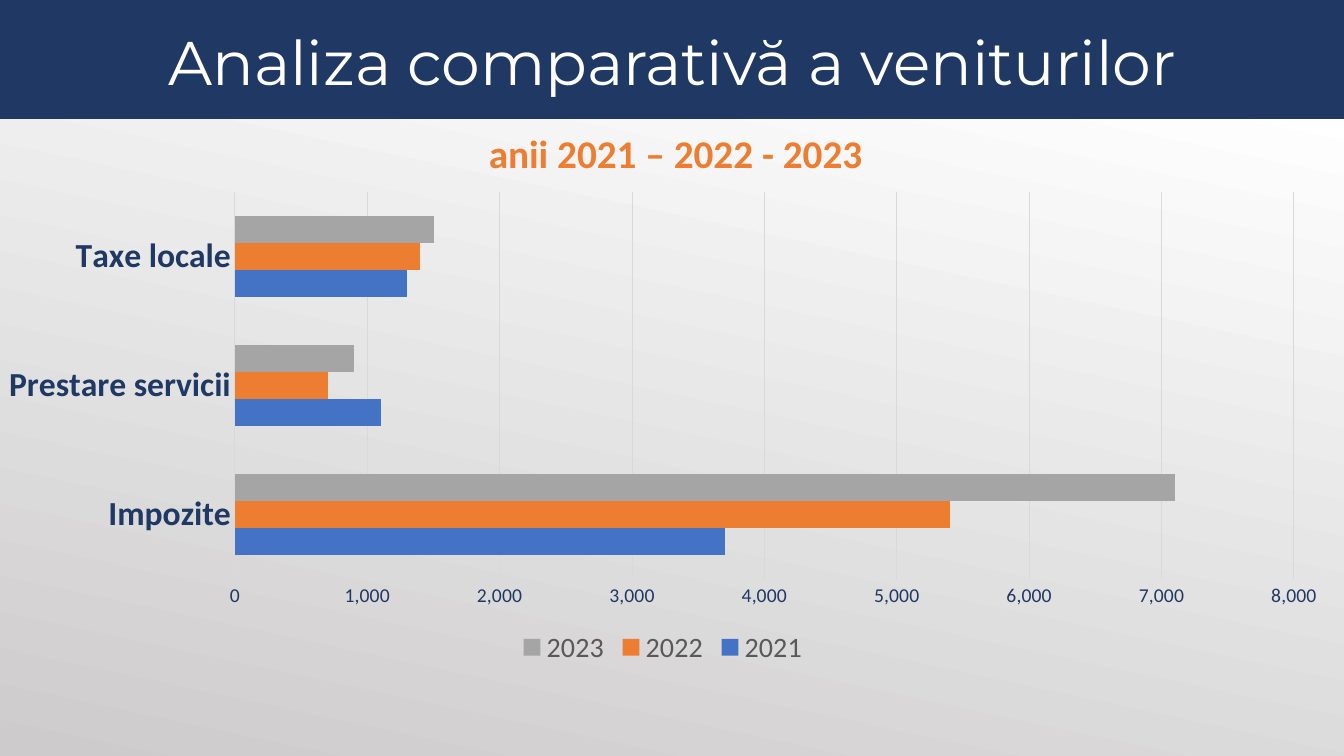
"""Builds the slide comparing revenues for 2021, 2022 and 2023."""
from pptx import Presentation
from pptx.chart.data import CategoryChartData
from pptx.dml.color import RGBColor
from pptx.enum.chart import XL_CHART_TYPE as ChartType, XL_LEGEND_POSITION as LegendPosition
from pptx.enum.chart import XL_TICK_MARK as TickMark
from pptx.enum.shapes import MSO_SHAPE as Shape
from pptx.enum.text import MSO_ANCHOR as Anchor, PP_ALIGN as Align
from pptx.util import Inches, Pt

TITLE = "Analiza comparativă a veniturilor"
SUBTITLE = "anii 2021 – 2022 - 2023"
CATEGORIES = ["Impozite", "Prestare servicii", "Taxe locale"]
REVENUES = {
    "2021": ([3700, 1100, 1300], "blue"),
    "2022": ([5400, 700, 1400], "orange"),
    "2023": ([7100, 900, 1500], "gray"),
}
COLORS = {
    "navy": "203864", "white": "FFFFFF", "shade": "CDCBCB", "blue": "4472C4",
    "orange": "ED7D31", "gray": "A5A5A5", "grid": "D9D9D9", "legend": "595959",
    "black": "000000",
}
WIDTH, HEIGHT = 13.33, 7.5
BACKDROP_STOPS = [(0.1, "white"), (1, "shade")]


def color(name):
    return RGBColor.from_string(COLORS[name])


def box(*lengths):
    return [Inches(length) for length in lengths]


def style_font(font, size, color_name, bold=False, face="Calibri"):
    font.name, font.size, font.bold = face, Pt(size), bold
    font.color.rgb = color(color_name)


def style_line(line, color_name):
    line.color.rgb = color(color_name)
    line.width = Pt(0.75)


def add_backdrop(slide):
    fill = slide.background.fill
    fill.gradient()
    fill.gradient_angle = 360 - 102
    for stop, (position, color_name) in zip(fill.gradient_stops, BACKDROP_STOPS):
        stop.position = position
        stop.color.rgb = color(color_name)


def add_headings(slide):
    banner = slide.shapes.add_shape(Shape.RECTANGLE, *box(0, 0, WIDTH, 1.18))
    banner.shadow.inherit = False
    banner.fill.solid()
    banner.fill.fore_color.rgb = color("navy")
    banner.line.fill.background()

    title = slide.shapes.title
    title.element.addprevious(banner.element)
    title.left, title.top, title.width, title.height = box(0.17, 0.25, 13, 0.81)
    title.text_frame.vertical_anchor = Anchor.MIDDLE
    subtitle = slide.shapes.add_textbox(*box(0.23, 1.23, 12.94, 0.57))
    subtitle.text_frame.word_wrap = True
    for heading, text in ((title, TITLE), (subtitle, SUBTITLE)):
        heading.text_frame.text = text
        heading.text_frame.paragraphs[0].alignment = Align.CENTER
    title_line = title.text_frame.paragraphs[0]
    title_line.line_spacing = 0.9
    style_font(title_line.font, 44, "white", face="Montserrat")
    style_font(subtitle.text_frame.paragraphs[0].font, 28, "orange", bold=True)


def add_revenue_chart(slide):
    data = CategoryChartData(number_format="#,##0")
    data.categories = CATEGORIES
    for year, (amounts, _) in REVENUES.items():
        data.add_series(year, amounts)
    chart = slide.shapes.add_chart(
        ChartType.BAR_CLUSTERED, *box(-0.18, 1.81, 13.51, 4.84), data).chart
    chart.has_title = False
    style_font(chart.font, 10, "black")

    plot = chart.plots[0]
    plot.gap_width = 182
    plot.overlap = 0
    plot.vary_by_categories = False
    for series, (_, color_name) in zip(plot.series, REVENUES.values()):
        series.format.fill.solid()
        series.format.fill.fore_color.rgb = color(color_name)

    sources, amounts_axis = chart.category_axis, chart.value_axis
    for axis in (sources, amounts_axis):
        axis.major_tick_mark = axis.minor_tick_mark = TickMark.NONE
    style_font(sources.tick_labels.font, 24, "navy", bold=True)
    style_line(sources.format.line, "grid")
    style_font(amounts_axis.tick_labels.font, 14, "navy")
    amounts_axis.tick_labels.number_format = "#,##0"
    amounts_axis.tick_labels.number_format_is_linked = False
    amounts_axis.minimum_scale, amounts_axis.maximum_scale = 0, 8000
    amounts_axis.major_unit = 1000
    amounts_axis.format.line.fill.background()
    style_line(amounts_axis.major_gridlines.format.line, "grid")

    chart.has_legend = True
    chart.legend.position = LegendPosition.BOTTOM
    chart.legend.include_in_layout = False
    style_font(chart.legend.font, 20, "legend")


def main():
    deck = Presentation()
    deck.slide_width, deck.slide_height = box(WIDTH, HEIGHT)
    slide = deck.slides.add_slide(deck.slide_layouts.get_by_name("Title Only"))
    add_backdrop(slide)
    add_headings(slide)
    add_revenue_chart(slide)
    deck.save("out.pptx")


if __name__ == "__main__":
    main()
